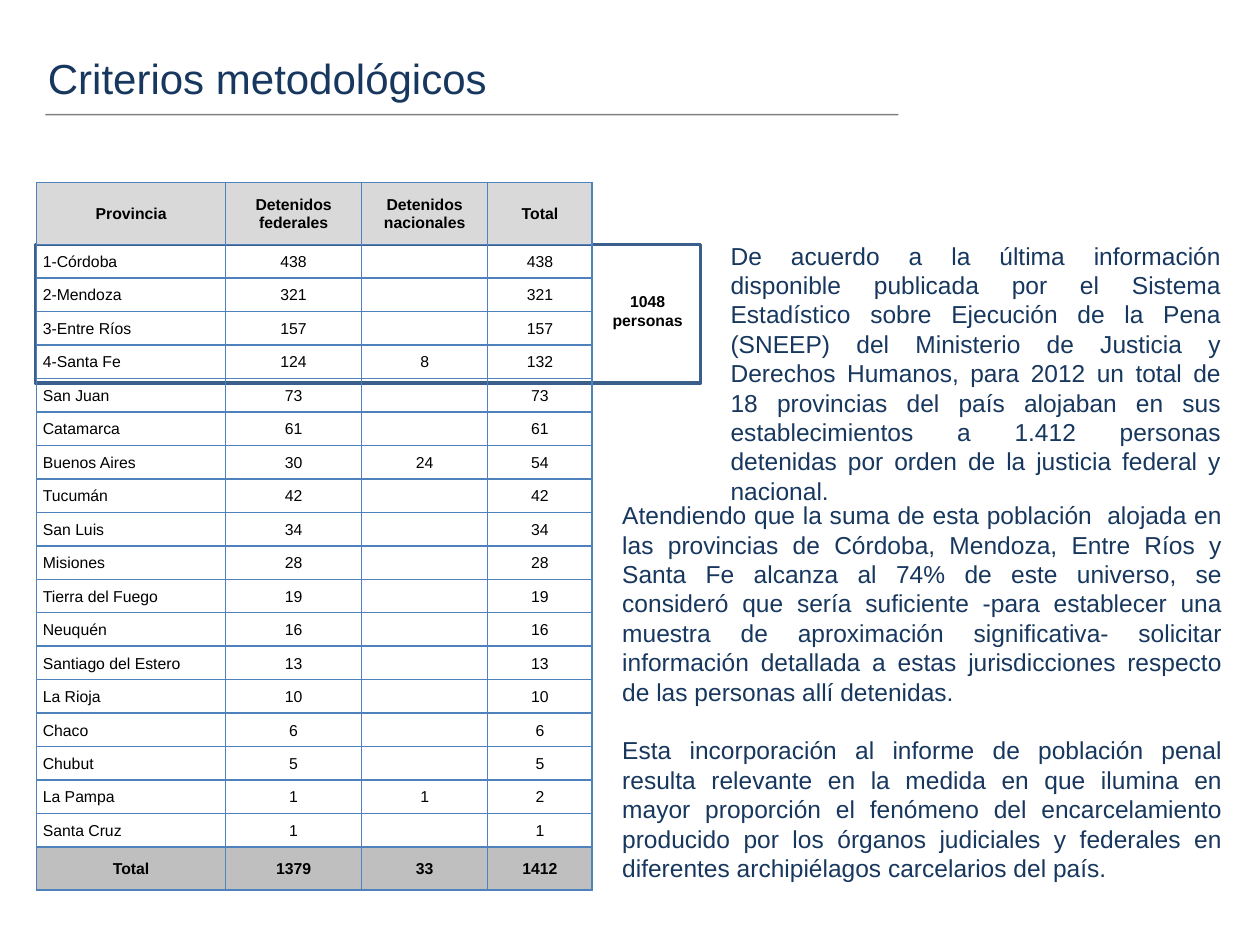
from lxml.etree import SubElement
from pptx import Presentation
from pptx.dml.color import RGBColor
from pptx.enum.shapes import MSO_CONNECTOR, MSO_SHAPE
from pptx.enum.text import MSO_ANCHOR, MSO_AUTO_SIZE, PP_ALIGN
from pptx.oxml import parse_xml
from pptx.oxml.ns import nsdecls, qn
from pptx.util import Inches, Pt

NAVY = RGBColor(0x17, 0x37, 0x5E)
BLACK = RGBColor(0, 0, 0)
BOX_BLUE = RGBColor(0x3A, 0x5F, 0x8C)
BORDER_BLUE = RGBColor(0x4F, 0x81, 0xBD)
HEADER_GRAY = RGBColor(0xD9, 0xD9, 0xD9)
TOTAL_GRAY = RGBColor(0xBF, 0xBF, 0xBF)

TITLE = "Criterios metodológicos"
HEADER = ("Provincia", "Detenidos federales", "Detenidos nacionales", "Total")
PROVINCES = [
    ("1-Córdoba", 438, "", 438),
    ("2-Mendoza", 321, "", 321),
    ("3-Entre Ríos", 157, "", 157),
    ("4-Santa Fe", 124, 8, 132),
    ("San Juan", 73, "", 73),
    ("Catamarca", 61, "", 61),
    ("Buenos Aires", 30, 24, 54),
    ("Tucumán", 42, "", 42),
    ("San Luis", 34, "", 34),
    ("Misiones", 28, "", 28),
    ("Tierra del Fuego", 19, "", 19),
    ("Neuquén", 16, "", 16),
    ("Santiago del Estero", 13, "", 13),
    ("La Rioja", 10, "", 10),
    ("Chaco", 6, "", 6),
    ("Chubut", 5, "", 5),
    ("La Pampa", 1, 1, 2),
    ("Santa Cruz", 1, "", 1),
]
TOTALS = ("Total", 1379, 33, 1412)
COL_WIDTHS = (1.5, 1.08, 1, 0.83)
TABLE_HEIGHT, HEADER_HEIGHT, TOTAL_HEIGHT = 5.62, 0.49, 0.34

SOURCE_TEXT = [
    "De acuerdo a la última información disponible publicada por el Sistema "
    "Estadístico sobre Ejecución de la Pena (SNEEP) del Ministerio de Justicia y "
    "Derechos Humanos, para 2012 un total de 18 provincias del país alojaban en sus "
    "establecimientos a 1.412 personas detenidas por orden de la justicia federal y "
    "nacional.",
]
SAMPLE_TEXT = [
    "Atendiendo que la suma de esta población  alojada en las provincias de Córdoba, "
    "Mendoza, Entre Ríos y Santa Fe alcanza al 74% de este universo, se consideró que "
    "sería suficiente -para establecer una muestra de aproximación significativa- "
    "solicitar información detallada a estas jurisdicciones respecto de las personas "
    "allí detenidas.",
    "Esta incorporación al informe de población penal resulta relevante en la medida "
    "en que ilumina en mayor proporción el fenómeno del encarcelamiento producido por "
    "los órganos judiciales y federales en diferentes archipiélagos carcelarios del "
    "país.",
]
SAMPLE_SIZE = ["1048", "personas"]


def style(p, size, color, align, bold=False):
    p.alignment = align
    p.font.name = "Arial"
    p.font.size = Pt(size)
    p.font.bold = bold
    p.font.color.rgb = color


def add_text(s, box, paragraphs, size, color, align, bold=False, wrap=True, gap=0):
    tf = s.shapes.add_textbox(*map(Inches, box)).text_frame
    tf.word_wrap = wrap
    for i, text in enumerate(paragraphs):
        p = tf.paragraphs[0] if i == 0 else tf.add_paragraph()
        p.text = text
        p.space_before = Pt(gap if i else 0)
        style(p, size, color, align, bold)


def add_borders(cell):
    tc_pr = cell._tc.get_or_add_tcPr()
    for side in ("lnL", "lnR", "lnT", "lnB"):
        tc_pr.append(parse_xml(
            f'<a:{side} {nsdecls("a")} w="{Pt(1)}"><a:solidFill>'
            f'<a:srgbClr val="{BORDER_BLUE}"/></a:solidFill></a:{side}>'))


def fill_cell(cell, value, fill, align, bold):
    cell.vertical_anchor = MSO_ANCHOR.MIDDLE
    cell.margin_left = Inches(0.05 if align == PP_ALIGN.LEFT else 0.01)
    cell.margin_right = cell.margin_top = Inches(0.01)
    cell.margin_bottom = 0
    add_borders(cell)
    if fill:
        cell.fill.solid()
        cell.fill.fore_color.rgb = fill
    else:
        cell.fill.background()
    p = cell.text_frame.paragraphs[0]
    if value == "":
        SubElement(p._p, qn("a:endParaRPr")).set("sz", "900")
    else:
        p.text = str(value)
    style(p, 9, BLACK, align, bold)


def add_table(s):
    rows = [HEADER, *PROVINCES, TOTALS]
    last = len(rows) - 1
    row_height = (TABLE_HEIGHT - HEADER_HEIGHT - TOTAL_HEIGHT) / len(PROVINCES)
    table = s.shapes.add_table(
        len(rows), len(HEADER), Inches(0.29), Inches(1.45),
        Inches(sum(COL_WIDTHS)), Inches(TABLE_HEIGHT)).table
    table.first_row = table.horz_banding = False
    for column, width in zip(table.columns, COL_WIDTHS):
        column.width = Inches(width)
    special = {0: (HEADER_HEIGHT, HEADER_GRAY), last: (TOTAL_HEIGHT, TOTAL_GRAY)}
    for i, row in enumerate(rows):
        height, fill = special.get(i, (row_height, None))
        table.rows[i].height = Inches(height)
        for j, value in enumerate(row):
            is_name = j == 0 and i not in special
            align = PP_ALIGN.LEFT if is_name else PP_ALIGN.CENTER
            fill_cell(table.cell(i, j), value, fill, align, i in special)


def add_title(s):
    title = s.shapes.title
    title.left, title.top, title.width, title.height = map(Inches, (0.28, 0.37, 7.4, 0.62))
    tf = title.text_frame
    tf.text = TITLE
    tf.auto_size = MSO_AUTO_SIZE.NONE
    tf.vertical_anchor = MSO_ANCHOR.TOP
    style(tf.paragraphs[0], 24, NAVY, PP_ALIGN.LEFT)

    rule = s.shapes.add_connector(
        MSO_CONNECTOR.STRAIGHT, Inches(0.36), Inches(0.91), Inches(7.13), Inches(0.91))
    rule.line.color.rgb = BLACK
    rule.line.width = Pt(0.75)
    color = rule._element.spPr.find(".//" + qn("a:srgbClr"))
    SubElement(color, qn("a:alpha")).set("val", "50000")
    SubElement(rule._element.spPr, qn("a:effectLst"))


def add_sample_box(s):
    box = s.shapes.add_shape(
        MSO_SHAPE.RECTANGLE, Inches(0.28), Inches(1.94), Inches(5.28), Inches(1.1))
    box.shadow.inherit = False
    box.fill.background()
    box.line.color.rgb = BOX_BLUE
    box.line.width = Pt(2)


def main():
    prs = Presentation()
    prs.slide_width, prs.slide_height = Inches(10), Inches(7.5)
    s = prs.slides.add_slide(prs.slide_layouts[5])
    add_title(s)
    add_text(s, (5.7, 1.86, 4.09, 1.99), SOURCE_TEXT, 14, NAVY, PP_ALIGN.JUSTIFY)
    add_sample_box(s)
    add_text(s, (4.76, 2.27, 0.76, 0.4), SAMPLE_SIZE, 9, BLACK, PP_ALIGN.CENTER,
             bold=True, wrap=False)
    add_text(s, (4.84, 3.92, 4.96, 3.16), SAMPLE_TEXT, 14, NAVY, PP_ALIGN.JUSTIFY, gap=16.8)
    add_table(s)
    prs.save("out.pptx")


if __name__ == "__main__":
    main()
